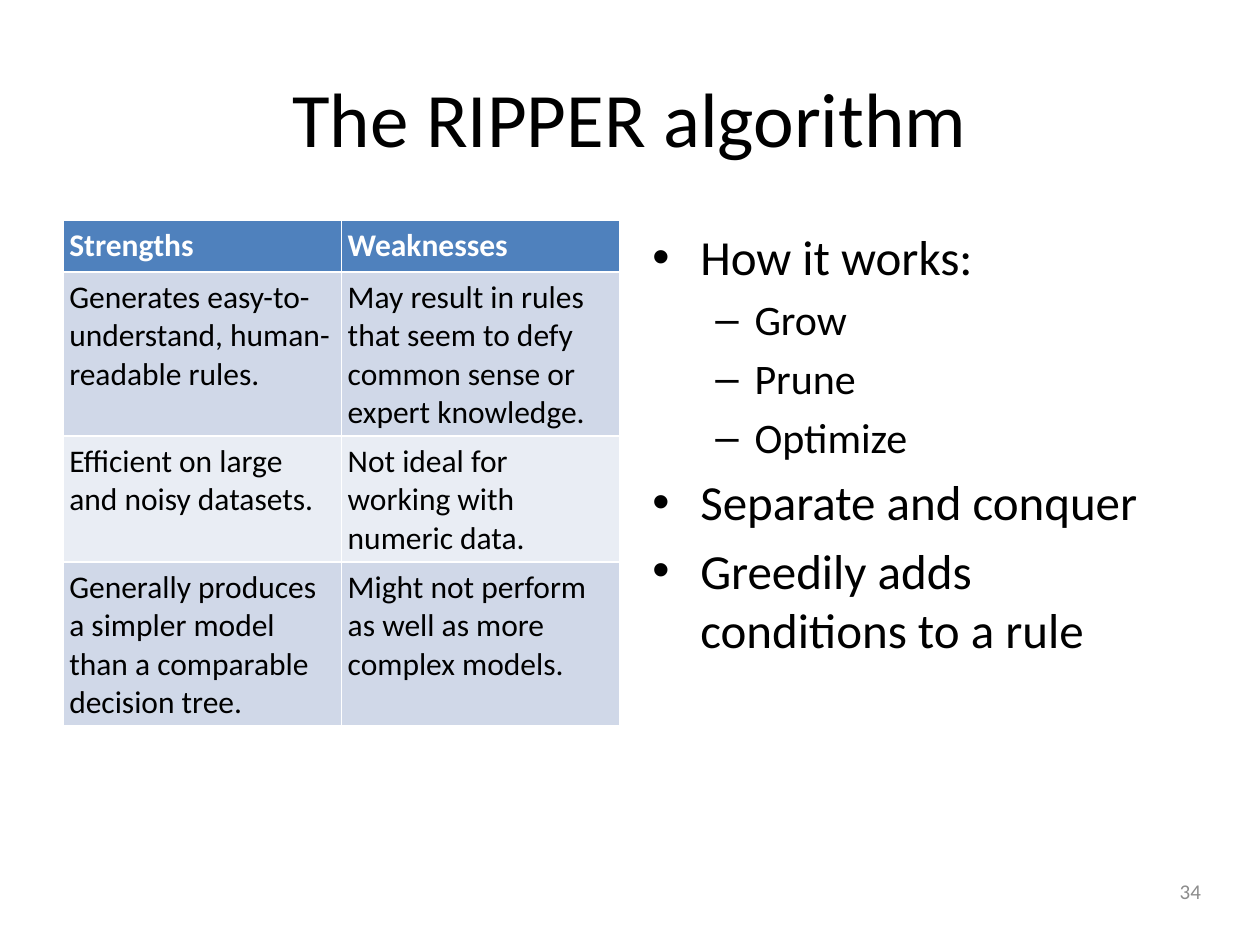
from lxml import etree
from pptx import Presentation
from pptx.dml.color import RGBColor
from pptx.enum.text import MSO_ANCHOR, PP_ALIGN
from pptx.oxml.ns import qn
from pptx.util import Inches, Pt

LEFT, CENTER, RIGHT = PP_ALIGN.LEFT, PP_ALIGN.CENTER, PP_ALIGN.RIGHT
TOP, MIDDLE = MSO_ANCHOR.TOP, MSO_ANCHOR.MIDDLE
COLORS = {"text": "000000", "number": "8C8C8C", "header": "4F81BD",
          "header_text": "FFFFFF", "odd": "D0D8E8", "even": "E9EDF4"}


def write(paragraph, text, size, color, bold=False, align=LEFT):
    paragraph.alignment = align
    run = paragraph.add_run()
    run.text = text
    for name, value in {"name": "Calibri", "size": Pt(size), "bold": bold}.items():
        setattr(run.font, name, value)
    run.font.color.rgb = RGBColor.from_string(COLORS[color])


def add_frame(left, top, width, height, anchor):
    frame = slide.shapes.add_textbox(
        Inches(left), Inches(top), Inches(width), Inches(height)).text_frame
    frame.word_wrap = True
    frame.vertical_anchor = anchor
    return frame


prs = Presentation()
prs.slide_width, prs.slide_height = Inches(10), Inches(7.5)
slide = prs.slides.add_slide(prs.slide_layouts[6])

page_number = add_frame(7.3, 6.87, 2.33, 0.4, MIDDLE)
write(page_number.paragraphs[0], "34", 12, "number", align=RIGHT)

title = add_frame(0.5, 0.3, 9, 1.25, MIDDLE)
write(title.paragraphs[0], "The RIPPER algorithm", 44, "text", align=CENTER)

comparison = [
    ("Strengths", "Weaknesses"),
    ("Generates easy-to-understand, human-readable rules.",
     "May result in rules that seem to defy common sense or expert knowledge."),
    ("Efficient on large and noisy datasets.",
     "Not ideal for working with numeric data."),
    ("Generally produces a simpler model than a comparable decision tree.",
     "Might not perform as well as more complex models."),
]
table = slide.shapes.add_table(
    len(comparison), 2, Inches(0.5), Inches(1.75), Inches(4.42), Inches(1.64)).table
for r, entries in enumerate(comparison):
    table.rows[r].height = Inches(0.41)
    is_header = r == 0
    fill = "header" if is_header else "odd" if r % 2 else "even"
    for c, entry in enumerate(entries):
        cell = table.cell(r, c)
        for side in ("left", "top", "right", "bottom"):
            setattr(cell, f"margin_{side}", Inches(0.05))
        cell.fill.solid()
        cell.fill.fore_color.rgb = RGBColor.from_string(COLORS[fill])
        write(cell.text_frame.paragraphs[0], entry, 18,
              "header_text" if is_header else "text", bold=is_header)

levels = [
    {"size": 28, "bullet": "•", "margin": 0.38, "indent": -0.38},
    {"size": 24, "bullet": "–", "margin": 0.81, "indent": -0.31},
]
points = [("How it works:", 0), ("Grow", 1), ("Prune", 1), ("Optimize", 1),
          ("Separate and conquer", 0), ("Greedily adds conditions to a rule", 0)]
explanation = add_frame(5.08, 1.75, 4.42, 4.95, TOP)
for i, (point, depth) in enumerate(points):
    paragraph = explanation.add_paragraph() if i else explanation.paragraphs[0]
    level = levels[depth]
    write(paragraph, point, level["size"], "text")
    paragraph.level = depth
    properties = paragraph._p.get_or_add_pPr()
    properties.set("marL", str(Inches(level["margin"])))
    properties.set("indent", str(Inches(level["indent"])))
    spacing = etree.SubElement(properties, qn("a:spcBef"))
    etree.SubElement(spacing, qn("a:spcPct"), val="20000")
    etree.SubElement(properties, qn("a:buFont"), typeface="Arial")
    etree.SubElement(properties, qn("a:buChar"), char=level["bullet"])

prs.save("out.pptx")
